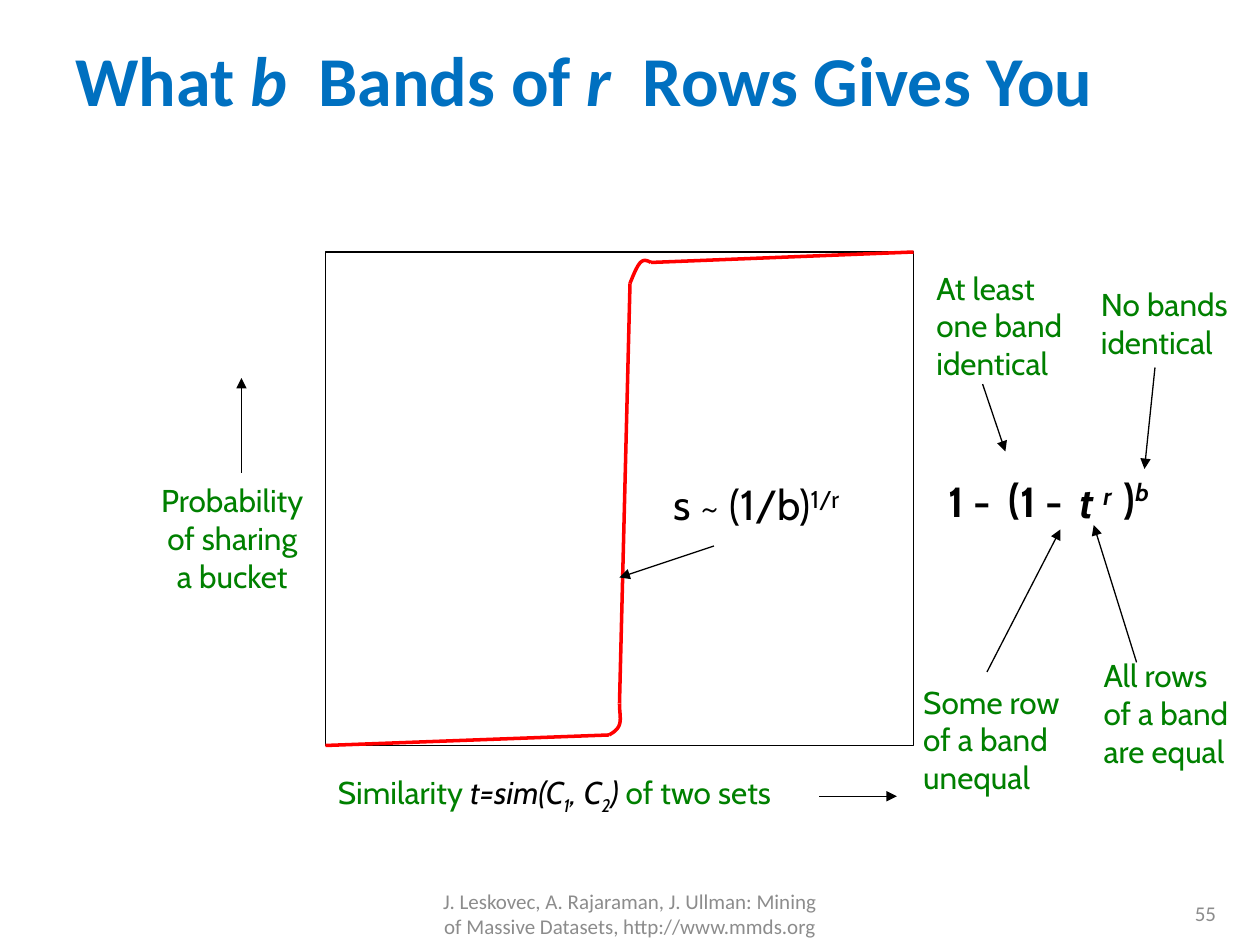
from dataclasses import dataclass

from lxml.etree import SubElement
from pptx import Presentation
from pptx.dml.color import RGBColor as Color
from pptx.enum.shapes import MSO_CONNECTOR as Connector, MSO_SHAPE as Preset
from pptx.enum.text import MSO_ANCHOR as Anchor, MSO_AUTO_SIZE as AutoSize, PP_ALIGN as Align
from pptx.oxml.ns import qn
from pptx.util import Pt


@dataclass(frozen=True)
class Theme:
    title: str = "0070C0"
    ink: str = "000000"
    note: str = "008000"
    curve: str = "FF0000"
    footer: str = "8C8C8C"
    heading_font: str = "Calibri"
    body_font: str = "Cabin"
    title_size: int = 40
    formula_size: int = 24
    note_size: int = 18
    footer_size: int = 12
    thin: float = 0.75
    thick: float = 2


THEME = Theme()
TITLE = dict(name=THEME.heading_font, size=THEME.title_size, color=THEME.title, bold=True)
FORMULA = dict(name=THEME.body_font, size=THEME.formula_size, color=THEME.ink)
BOLD = FORMULA | dict(bold=True)
NOTE = dict(name=THEME.body_font, size=THEME.note_size, color=THEME.note)
SYMBOL = NOTE | dict(color=THEME.ink, italic=True)
FOOTER = dict(name=THEME.heading_font, size=THEME.footer_size, color=THEME.footer)


def bezier(start, first, second, end, steps=12):
    for step in range(1, steps + 1):
        t = step / steps
        weights = ((1 - t) ** 3, 3 * t * (1 - t) ** 2, 3 * t * t * (1 - t), t ** 3)
        yield tuple(
            sum(weight * value for weight, value in zip(weights, axis))
            for axis in zip(start, first, second, end)
        )


class Painter:
    def __init__(self, slide, theme):
        self.shapes = slide.shapes
        self.theme = theme

    def text(self, place, paragraphs, style, align=Align.LEFT, wrap=False, anchor=Anchor.TOP):
        box = self.shapes.add_textbox(*map(Pt, place))
        frame = box.text_frame
        sizing = AutoSize.NONE if wrap else AutoSize.SHAPE_TO_FIT_TEXT
        layout = dict(word_wrap=wrap, auto_size=sizing, vertical_anchor=anchor)
        for key, value in layout.items():
            setattr(frame, key, value)
        for index, pieces in enumerate(paragraphs):
            para = frame.add_paragraph() if index else frame.paragraphs[0]
            para.alignment = align
            for words, changes in pieces:
                self.span(para, words, style | changes)

    def span(self, para, words, style):
        span = para.add_run()
        span.text = words
        values = dict(style)
        span.font.color.rgb = Color.from_string(values.pop("color"))
        baseline = values.pop("baseline", 0)
        values["size"] = Pt(values["size"])
        for key, value in values.items():
            setattr(span.font, key, value)
        if baseline:
            span._r.get_or_add_rPr().set("baseline", str(baseline * 1000))

    def lines(self, place, lines, align=Align.LEFT):
        self.text(place, [[(line, {})] for line in lines], NOTE, align)

    def outline(self, shape, color, width):
        shape.line.color.rgb = Color.from_string(color)
        shape.line.width = Pt(width)

    def frame(self, place):
        shape = self.shapes.add_shape(Preset.RECTANGLE, *map(Pt, place))
        shape.shadow.inherit = False
        shape.fill.background()
        self.outline(shape, self.theme.ink, self.theme.thin)

    def line(self, start, end, color, width):
        line = self.shapes.add_connector(Connector.STRAIGHT, *map(Pt, start + end))
        self.outline(line, color, width)
        SubElement(line._element.spPr, qn("a:effectLst"))
        return line

    def arrow(self, start, end):
        arrow = self.line(start, end, self.theme.ink, self.theme.thin)
        SubElement(arrow.line._get_or_add_ln(), qn("a:tailEnd"), type="triangle")

    def bend(self, start, *curves):
        points = [start]
        for first, second, end in curves:
            points.extend(bezier(points[-1], first, second, end))
        corners = [tuple(map(Pt, point)) for point in points]
        builder = self.shapes.build_freeform(*corners[0], scale=1.0)
        builder.add_line_segments(corners[1:], close=False)
        shape = builder.convert_to_shape()
        shape.shadow.inherit = False
        shape.fill.background()
        self.outline(shape, self.theme.curve, self.theme.thick)


def main():
    deck = Presentation()
    deck.slide_width, deck.slide_height = Pt(720), Pt(540)
    page = Painter(deck.slides.add_slide(deck.slide_layouts[6]), THEME)

    italic = dict(italic=True)
    raised = dict(baseline=30)
    lowered = SYMBOL | dict(baseline=-25)

    title = [("What ", {}), ("b", italic), ("  Bands of ", {}), ("r", italic),
             ("  Rows Gives You", {})]
    page.text((36, 6, 684, 78), [title], TITLE, wrap=True, anchor=Anchor.MIDDLE)

    page.frame((186, 144, 336, 282))
    for start, end in (
        ((186, 426), (348, 420)),
        ((354, 402), (360, 162)),
        ((372, 150), (522, 144)),
    ):
        page.line(start, end, THEME.curve, THEME.thick)
    page.bend((348, 420), ((350.5, 418.5), (353, 417), (354, 414)),
              ((355, 411), (354, 407), (354, 402)))
    page.bend((360, 162), ((362, 157), (364, 152), (366, 150)),
              ((368, 148), (370, 149), (372, 150)))

    for place, pieces, style in (
        ((610, 268.5, 44, 36.5), [("t ", {}), ("r", raised)], BOLD | italic),
        ((576, 268, 47.5, 36.5), [("1 -", {})], BOLD),
        ((569, 266.5, 25, 36.5), [("(", {})], BOLD),
        ((635, 266.5, 40, 36.5), [(")", {}), ("b", italic | raised)], BOLD),
        ((535, 268, 47.5, 36.5), [("1 -", {})], BOLD),
        ((378, 270, 139, 36.5), [("s ~ (1/b)", {}), ("1/r", raised)], FORMULA),
    ):
        page.text(place, [pieces], style)

    page.lines((623.5, 371.5, 90, 72), ("All rows", "of a band", "are equal"))
    page.lines((520.5, 386.5, 94, 72), ("Some row", "of a band", "unequal"))
    page.lines((622, 159.5, 89, 50.5), ("No bands", "identical"))
    page.lines((528, 150, 88.5, 72), ("At least", "one band", "identical"))
    page.lines((84, 271.5, 97.5, 72), ("Probability", "of sharing", "a bucket"), Align.CENTER)

    similarity = [("Similarity ", {}), ("t=sim(C", SYMBOL), ("1", lowered), (", C", SYMBOL),
                  ("2", lowered), (") ", SYMBOL), ("of two sets", {})]
    page.text((186, 438, 264, 29), [similarity], NOTE)

    for start, end in (
        ((649.5, 378.5), (625, 300)),
        ((564, 384), (606, 302.5)),
        ((660, 210), (654, 268)),
        ((561.5, 219.5), (574.5, 258)),
        ((408, 312), (354, 330)),
        ((468, 455), (512.5, 455)),
        ((138, 270), (138, 216)),
    ):
        page.arrow(start, end)

    source = ("J. Leskovec, A. Rajaraman, J. Ullman: Mining of Massive Datasets, "
              "http://www.mmds.org")
    page.text((534, 507.5, 168, 29), [[("55", {})]], FOOTER, Align.RIGHT, True, Anchor.MIDDLE)
    page.text((246, 507.5, 228, 29), [[(source, {})]], FOOTER, Align.CENTER, True, Anchor.MIDDLE)

    deck.save("out.pptx")


if __name__ == "__main__":
    main()
